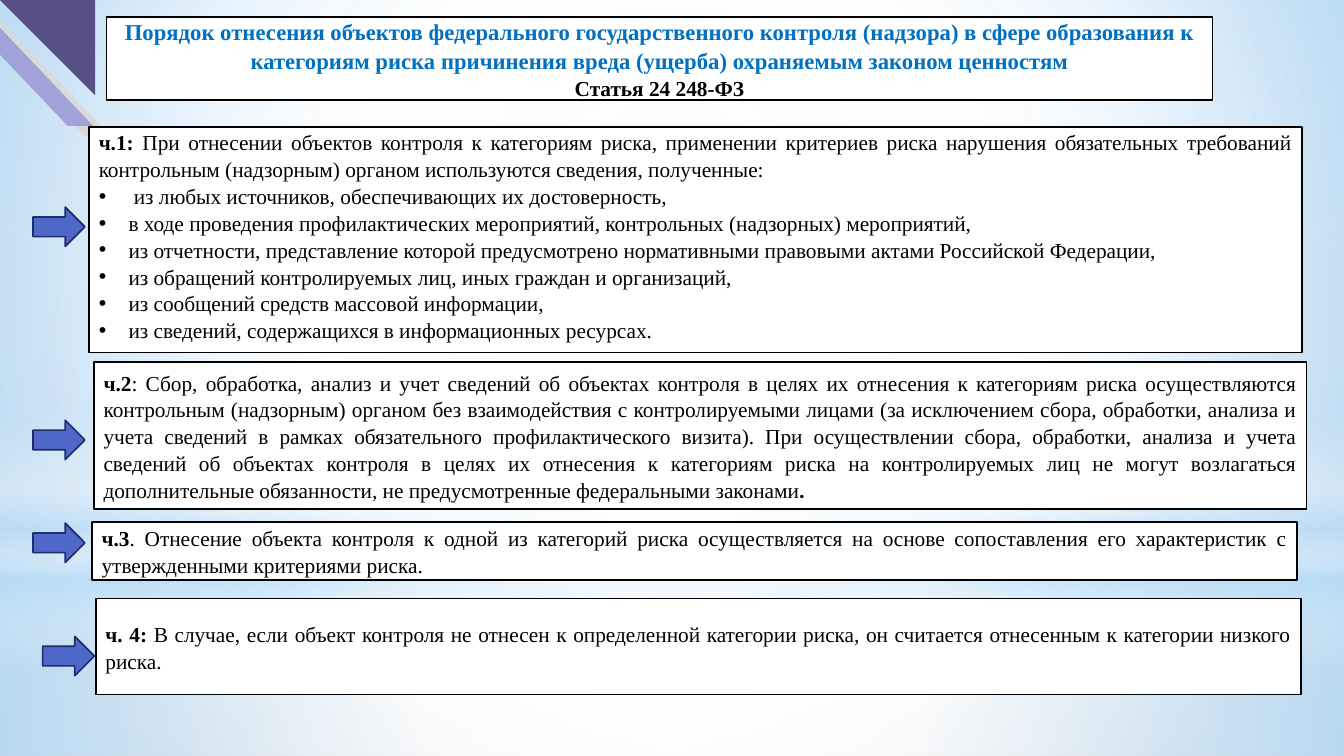
from dataclasses import dataclass

from lxml.etree import SubElement
from pptx import Presentation
from pptx.dml.color import RGBColor
from pptx.enum.shapes import MSO_AUTO_SHAPE_TYPE as Kind
from pptx.enum.text import MSO_VERTICAL_ANCHOR as Anchor
from pptx.enum.text import PP_PARAGRAPH_ALIGNMENT as Align
from pptx.oxml import parse_xml
from pptx.oxml.ns import nsdecls, qn
from pptx.util import Pt

BLACK = RGBColor(0x00, 0x00, 0x00)
WHITE = RGBColor(0xFF, 0xFF, 0xFF)
TITLE_BLUE = RGBColor(0x00, 0x70, 0xC0)
ARROW_BLUE = RGBColor(0x4E, 0x67, 0xC8)
ARROW_EDGE = RGBColor(0x1F, 0x2E, 0x69)
SKY = RGBColor(0xB4, 0xDC, 0xFA)
PALE_GREY = RGBColor(0xF4, 0xF4, 0xF4)
MID_GREY = RGBColor(0xCC, 0xCC, 0xCC)
RIBBON_GREY = RGBColor(0xD9, 0xD9, 0xD9)
LILAC = RGBColor(0xA2, 0xA2, 0xDA)
VIOLET = RGBColor(0x56, 0x50, 0x87)

WIDTH, HEIGHT = 1008, 566.64
SERIF = "Times New Roman"
CENTRE = (50, 50, 50, 50)
BULLET_INDENT = 22.3
FRAME_FORMAT = {
    "word_wrap": True, "vertical_anchor": Anchor.MIDDLE, "margin_left": Pt(7.2),
    "margin_right": Pt(7.2), "margin_top": Pt(3.6),
}


@dataclass(frozen=True)
class Box:
    left: float
    top: float
    width: float
    height: float


@dataclass(frozen=True)
class Stop:
    position: int
    color: RGBColor
    opacity: int = 100


@dataclass(frozen=True)
class Glow:
    kind: Kind
    box: Box
    stops: tuple[Stop, ...]
    focus: tuple[int, ...] | None = CENTRE


@dataclass(frozen=True)
class Ornament:
    kind: Kind
    box: Box
    color: RGBColor
    flips: tuple[str, ...]
    adjustment: float | None = None


@dataclass(frozen=True)
class Words:
    text: str
    bold: bool = False
    size: float = 16
    color: RGBColor = BLACK
    name: str = SERIF


@dataclass(frozen=True)
class Lines:
    words: tuple[Words, ...]
    alignment: Align = Align.JUSTIFY
    indent: float = 0


@dataclass(frozen=True)
class Panel:
    box: Box
    paragraphs: tuple[Lines, ...]
    margin_bottom: float = 3.6


def add_plain_shape(slide, kind: Kind, box: Box, fill: RGBColor, edge: RGBColor | None = None):
    """Add a shadowless shape with a solid fill and an optional outline."""
    shape = slide.shapes.add_shape(kind, Pt(box.left), Pt(box.top), Pt(box.width), Pt(box.height))
    shape.shadow.inherit = False
    shape.fill.solid()
    shape.fill.fore_color.rgb = fill
    if edge is None:
        shape.line.fill.background()
    else:
        shape.line.color.rgb = edge
        shape.line.width = Pt(1.25)
    return shape


def set_gradient(solid_fill, stops: tuple[Stop, ...], focus: tuple[int, ...] | None) -> None:
    """Replace a solid fill by a radial gradient, or a vertical one without focus."""
    gradient = parse_xml(f'<a:gradFill {nsdecls("a")} rotWithShape="1"><a:gsLst/></a:gradFill>')
    for stop in stops:
        mark = SubElement(gradient[0], qn("a:gs"), pos=str(stop.position * 1000))
        color = SubElement(mark, qn("a:srgbClr"), val=str(stop.color))
        if stop.opacity < 100:
            SubElement(color, qn("a:alpha"), val=str(stop.opacity * 1000))
    if focus is None:
        SubElement(gradient, qn("a:lin"), ang="5400000", scaled="0")
    else:
        circle = SubElement(gradient, qn("a:path"), path="circle")
        sides = {side: str(value * 1000) for side, value in zip("ltrb", focus)}
        SubElement(circle, qn("a:fillToRect"), **sides)
    solid_fill.getparent().replace(solid_fill, gradient)


def add_glow(slide, glow: Glow) -> None:
    """Add a soft gradient layer of the backdrop."""
    shape = add_plain_shape(slide, glow.kind, glow.box, WHITE)
    set_gradient(shape._element.spPr.find(qn("a:solidFill")), glow.stops, glow.focus)


def add_ornament(slide, ornament: Ornament) -> None:
    """Add a flipped corner ornament."""
    shape = add_plain_shape(slide, ornament.kind, ornament.box, ornament.color)
    if ornament.adjustment is not None:
        shape.adjustments[0] = ornament.adjustment
    for flip in ornament.flips:
        shape._element.spPr.xfrm.set(flip, "1")


def add_arrow(slide, left: float, top: float) -> None:
    """Add a block arrow turned to point right."""
    arrow = add_plain_shape(slide, Kind.DOWN_ARROW, Box(left, top, 29.5, 38.9), ARROW_BLUE, ARROW_EDGE)
    arrow.rotation = 270


def write_lines(paragraph, lines: Lines) -> None:
    """Fill one paragraph with its formatted runs."""
    if lines.indent:
        properties = paragraph._p.get_or_add_pPr()
        properties.set("marL", str(Pt(lines.indent)))
        properties.set("indent", str(-Pt(lines.indent)))
        SubElement(properties, qn("a:buFont"), typeface="Arial")
        SubElement(properties, qn("a:buChar"), char="•")
    paragraph.alignment = lines.alignment
    paragraph.line_spacing = 1.05
    for words in lines.words:
        run = paragraph.add_run()
        run.text = words.text
        run.font.color.rgb = words.color
        for key, value in {"name": words.name, "size": Pt(words.size), "bold": words.bold}.items():
            setattr(run.font, key, value)


def add_panel(slide, panel: Panel) -> None:
    """Add a white outlined box with its text."""
    frame = add_plain_shape(slide, Kind.RECTANGLE, panel.box, WHITE, BLACK).text_frame
    for key, value in {**FRAME_FORMAT, "margin_bottom": Pt(panel.margin_bottom)}.items():
        setattr(frame, key, value)
    for index, lines in enumerate(panel.paragraphs):
        write_lines(frame.add_paragraph() if index else frame.paragraphs[0], lines)


BACKDROP = (Stop(0, PALE_GREY), Stop(60, WHITE), Stop(100, MID_GREY))
GLOWS = (
    Glow(Kind.RECTANGLE, Box(0, 421.9, WIDTH, 144.74), (Stop(0, WHITE, 91), Stop(37, WHITE, 76), Stop(100, SKY, 79))),
    Glow(Kind.RECTANGLE, Box(0, 0, WIDTH, 421.9), (Stop(0, WHITE, 89), Stop(48, WHITE, 62), Stop(100, SKY, 79))),
    Glow(Kind.RECTANGLE, Box(0, 311.8, WIDTH, 188.6),
         (Stop(0, WHITE, 0), Stop(29, WHITE, 30), Stop(45, SKY, 40), Stop(55, WHITE, 26),
          Stop(65, SKY, 60), Stop(100, WHITE, 0)), None),
    Glow(Kind.OVAL, Box(0, 132.5, WIDTH, 421.9), (Stop(0, WHITE), Stop(56, WHITE, 0))),
)
ORNAMENTS = (
    Ornament(Kind.PARALLELOGRAM, Box(-25.9, 7.9, 108.7, 94.3), RIBBON_GREY, ("flipH",), 0.95),
    Ornament(Kind.PARALLELOGRAM, Box(-38.9, 0, 108.7, 94.3), LILAC, ("flipH",), 0.95),
    Ornament(Kind.RIGHT_TRIANGLE, Box(0, 0, 71.3, 71.3), VIOLET, ("flipH", "flipV")),
)
ARROWS = ((29.5, 150.5), (29.5, 310.3), (29.5, 387.4), (36.7, 472.3))
SOURCES = (
    "в ходе проведения профилактических мероприятий, контрольных (надзорных) мероприятий,",
    "из отчетности, представление которой предусмотрено нормативными правовыми актами Российской Федерации,",
    "из обращений контролируемых лиц, иных граждан и организаций,",
    "из сообщений средств массовой информации,",
    "из сведений, содержащихся в информационных ресурсах.",
)
PANELS = (
    Panel(Box(67, 95, 909.4, 169.2), (
        Lines((Words("ч.1: ", True), Words("При отнесении объектов контроля к категориям риска, применении критериев риска нарушения обязательных требований контрольным (надзорным) органом используются сведения, полученные:"))),
        Lines((Words("из любых источников, обеспечивающих их достоверность,"),), indent=BULLET_INDENT + 4),
        *(Lines((Words(source),), indent=BULLET_INDENT) for source in SOURCES)), 9.6),
    Panel(Box(79.9, 13, 829.4, 61.9), (
        Lines((Words("Порядок отнесения объектов федерального государственного контроля (надзора) в сфере образования к категориям риска причинения вреда (ущерба) охраняемым законом ценностям", True, 17, TITLE_BLUE),), Align.CENTER),
        Lines((Words("Статья 24 248-ФЗ", True),), Align.CENTER))),
    Panel(Box(69.1, 391, 903.6, 43.9), (
        Lines((Words("ч.3", True), Words(". Отнесение объекта контроля к одной из категорий риска осуществляется на основе сопоставления его характеристик с утвержденными критериями риска."))),)),
    Panel(Box(70.6, 271.4, 909.4, 110.2), (
        Lines((Words("ч.2", True), Words(": Сбор, обработка, анализ и учет сведений об объектах контроля в целях их отнесения к категориям риска осуществляются контрольным (надзорным) органом без взаимодействия с контролируемыми лицами (за исключением сбора, обработки, анализа и учета сведений в рамках обязательного профилактического визита). При осуществлении сбора, обработки, анализа и учета сведений об объектах контроля в целях их отнесения к категориям риска на контролируемых лиц не могут возлагаться дополнительные обязанности, не предусмотренные федеральными законами"), Words(".", True, name="Karla"))),)),
    Panel(Box(72, 448.6, 903.6, 72), (
        Lines((Words("ч. 4: ", True), Words("В случае, если объект контроля не отнесен к определенной категории риска, он считается отнесенным к категории низкого риска."))),)),
)


def main() -> None:
    """Build the slide and save it."""
    presentation = Presentation()
    presentation.slide_width, presentation.slide_height = Pt(WIDTH), Pt(HEIGHT)
    slide = presentation.slides.add_slide(presentation.slide_layouts[6])
    slide.background.fill.solid()
    set_gradient(slide._element.xpath(".//p:bg//a:solidFill")[0], BACKDROP, (20, 10, 20, 60))
    for glow in GLOWS:
        add_glow(slide, glow)
    for ornament in ORNAMENTS:
        add_ornament(slide, ornament)
    for left, top in ARROWS:
        add_arrow(slide, left, top)
    for panel in PANELS:
        add_panel(slide, panel)
    presentation.save("out.pptx")


if __name__ == "__main__":
    main()
